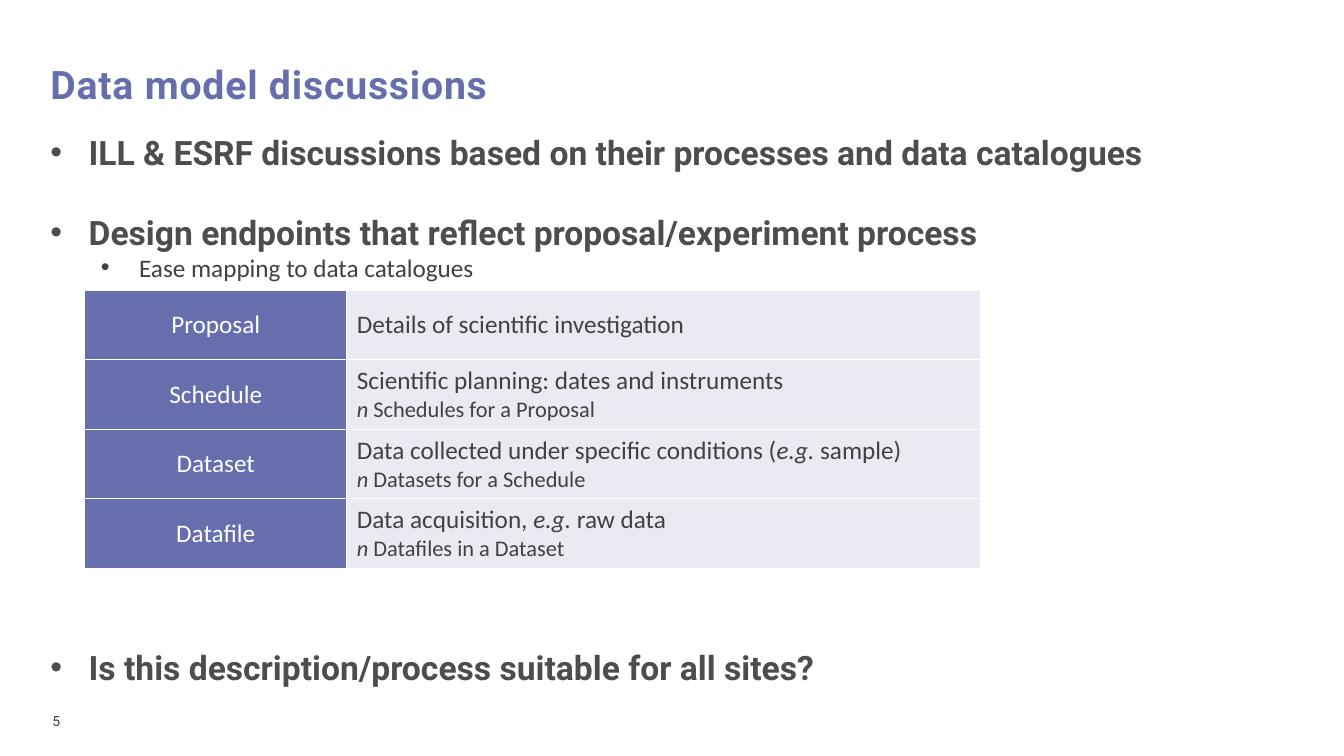
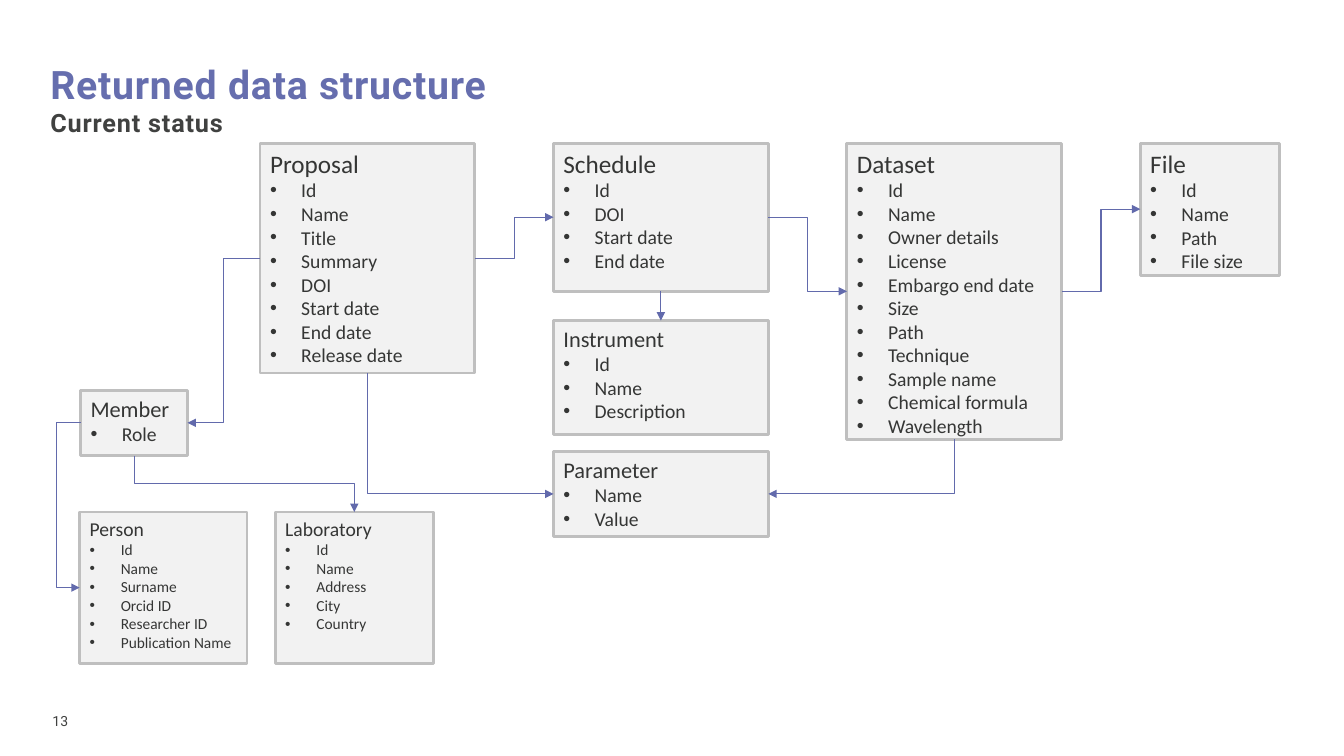
"""Build two slides on a data model: its levels and the returned data structure."""
from lxml.etree import SubElement
from pptx import Presentation
from pptx.dml.color import RGBColor
from pptx.enum.shapes import MSO_CONNECTOR, MSO_SHAPE
from pptx.enum.text import MSO_ANCHOR, PP_ALIGN
from pptx.oxml.ns import qn
from pptx.util import Inches, Pt

VIOLET, ARROW, INK, HEADING, LABEL = "666EAE", "626AAC", "404140", "4C4D4F", "353635"
WHITE, PALE, PANEL, EDGE = "FFFFFF", "EAEBF2", "F2F2F2", "BFBFBF"
TOP, LEFT, BOTTOM, RIGHT = range(4)


def color(value):
    return RGBColor.from_string(value)


class Composer:
    heading_font, body_font = "Roboto", "Calibri"

    def __init__(self):
        self.deck = Presentation()
        self.deck.slide_width, self.deck.slide_height = Inches(13.33), Inches(7.5)
        self.page = None

    def add_page(self, title, number, subtitle=None):
        self.page = self.deck.slides.add_slide(self.deck.slide_layouts[6])
        frame = self.text_box(0.5, 0.6, 7.99, 0.8)
        para = frame.paragraphs[0]
        self.style(para.font, 28, VIOLET, self.heading_font, True)
        self.spaced_span(para, title)
        if subtitle:
            para.add_line_break()
            span = self.spaced_span(para, subtitle)
            self.style(span.font, 18, INK, self.heading_font, True)
        frame = self.text_box(0.52, 7.07, 0.65, 0.3)
        self.fill_text(frame.paragraphs[0], str(number), 10, INK, self.heading_font)

    def spaced_span(self, para, text):
        span = para.add_run()
        span.text = text
        span.font._element.set("spc", "60")
        return span

    def style(self, font, size, ink, name, bold=False):
        font.size, font.name, font.bold = Pt(size), name, bold
        font.color.rgb = color(ink)

    def fill_text(self, para, text, size, ink, name=body_font, bold=False):
        self.style(para.font, size, ink, name, bold)
        for index, part in enumerate(text.split("*")):
            if part:
                span = para.add_run()
                span.text = part
                if index % 2:
                    span.font.italic = True

    def bullet(self, para, margin, hang):
        props = para._p.get_or_add_pPr()
        props.set("marL", str(Inches(margin)))
        props.set("indent", str(-Inches(hang)))
        SubElement(props, qn("a:buFont")).set("typeface", "Arial")
        SubElement(props, qn("a:buChar")).set("char", "•")

    def text_box(self, left, top, width, height):
        box = self.page.shapes.add_textbox(
            Inches(left), Inches(top), Inches(width), Inches(height))
        frame = box.text_frame
        frame.word_wrap = True
        frame.margin_left = frame.margin_top = frame.margin_right = frame.margin_bottom = 0
        return frame

    def bullets(self, top, height, points):
        frame = self.text_box(0.5, top, 12.33, height)
        for index, (text, level) in enumerate(points):
            para = frame.add_paragraph() if index else frame.paragraphs[0]
            self.bullet(para, 0.38 + level * 0.5, 0.38)
            if level:
                para.level = level
                self.fill_text(para, text, 18, INK)
            else:
                if index:
                    para.space_before = Pt(28)
                self.fill_text(para, text, 24, HEADING, self.heading_font, True)

    def table(self, left, top, widths, row_height, rows):
        table = self.page.shapes.add_table(
            len(rows), len(widths), Inches(left), Inches(top),
            Inches(sum(widths)), Inches(row_height * len(rows))).table
        table.first_row = table.horz_banding = False
        for column, width in zip(table.columns, widths):
            column.width = Inches(width)
        for row, (name, *details) in enumerate(rows):
            self.cell(table.cell(row, 0), [name], VIOLET, WHITE, PP_ALIGN.CENTER)
            self.cell(table.cell(row, 1), details, PALE, INK, PP_ALIGN.LEFT)

    def cell(self, cell, lines, fill, ink, align):
        props = cell._tc.get_or_add_tcPr()
        for side in ("lnL", "lnR", "lnT", "lnB"):
            border = SubElement(props, qn("a:" + side), w=str(Pt(1)))
            paint = SubElement(border, qn("a:solidFill"))
            SubElement(paint, qn("a:srgbClr")).set("val", WHITE)
        cell.fill.solid()
        cell.fill.fore_color.rgb = color(fill)
        cell.vertical_anchor = MSO_ANCHOR.MIDDLE
        for index, line in enumerate(lines):
            frame = cell.text_frame
            para = frame.add_paragraph() if index else frame.paragraphs[0]
            para.alignment = align
            self.fill_text(para, line, 16 if index else 18, ink)

    def entity(self, place, name, fields, name_size=18, field_size=14):
        box = self.page.shapes.add_shape(MSO_SHAPE.RECTANGLE, *map(Inches, place))
        box.shadow.inherit = False
        box.fill.solid()
        box.fill.fore_color.rgb = color(PANEL)
        box.line.color.rgb, box.line.width = color(EDGE), Pt(2)
        frame = box.text_frame
        frame.word_wrap, frame.vertical_anchor = True, MSO_ANCHOR.TOP
        frame.paragraphs[0].alignment = PP_ALIGN.LEFT
        self.fill_text(frame.paragraphs[0], name, name_size, LABEL)
        for field in fields:
            para = frame.add_paragraph()
            para.alignment = PP_ALIGN.LEFT
            self.bullet(para, 0.31, 0.31)
            self.fill_text(para, field, field_size, LABEL)
        return box

    def arrow(self, start, start_side, end, end_side, bend=None):
        straight = start_side == BOTTOM and start.left == end.left
        kind = MSO_CONNECTOR.STRAIGHT if straight else MSO_CONNECTOR.ELBOW
        link = self.page.shapes.add_connector(kind, 0, 0, 0, 0)
        link.begin_connect(start, start_side)
        link.end_connect(end, end_side)
        link.line.color.rgb, link.line.width = color(ARROW), Pt(0.75)
        SubElement(link.line._get_or_add_ln(), qn("a:tailEnd")).set("type", "triangle")
        props = link._element.spPr
        SubElement(props, qn("a:effectLst"))
        geometry = props.find(qn("a:prstGeom"))
        if bend is not None:
            ratio = (Inches(bend) - link.begin_x) / (link.end_x - link.begin_x)
            guides = geometry.find(qn("a:avLst"))
            SubElement(guides, qn("a:gd"), name="adj1", fmla=f"val {round(ratio * 100000)}")
        if start_side == BOTTOM and not straight:
            self.turn_down(link, props.find(qn("a:xfrm")))
            if end_side != TOP:
                geometry.set("prst", "bentConnector2")

    def turn_down(self, link, frame):
        rightward = link.end_x > link.begin_x
        width, height = link.width, link.height
        link.left += (width - height) // 2
        link.top += (height - width) // 2
        link.width, link.height = height, width
        frame.attrib.pop("flipH", None)
        frame.set("rot", str((270 if rightward else 90) * 60000))
        if rightward:
            frame.set("flipH", "1")


def model_page(composer):
    composer.add_page("Data model discussions", 5)
    composer.bullets(1.31, 1.5, [
        ("ILL & ESRF discussions based on their processes and data catalogues", 0),
        ("Design endpoints that reflect proposal/experiment process", 0),
        ("Ease mapping to data catalogues", 1)])
    composer.table(0.84, 2.88, [2.6, 6.29], 0.69, [
        ("Proposal", "Details of scientific investigation"),
        ("Schedule", "Scientific planning: dates and instruments",
         "*n* Schedules for a Proposal"),
        ("Dataset", "Data collected under specific conditions (*e.g.* sample)",
         "*n* Datasets for a Schedule"),
        ("Datafile", "Data acquisition, *e.g.* raw data", "*n* Datafiles in a Dataset")])
    composer.bullets(6.42, 0.4, [("Is this description/process suitable for all sites?", 0)])


def structure_page(composer):
    composer.add_page("Returned data structure", 13, "Current status")
    columns = [2.58 + 2.91 * index for index in range(4)]
    top, width, people_top = 1.42, 2.13, 5.08
    proposal = composer.entity(
        (columns[0], top, width, 2.28), "Proposal",
        ["Id", "Name", "Title", "Summary", "DOI", "Start date", "End date", "Release date"])
    schedule = composer.entity(
        (columns[1], top, width, 1.47), "Schedule", ["Id", "DOI", "Start date", "End date"])
    dataset = composer.entity(
        (columns[2], top, width, 2.94), "Dataset",
        ["Id", "Name", "Owner details", "License", "Embargo end date", "Size", "Path",
         "Technique", "Sample name", "Chemical formula", "Wavelength"])
    datafile = composer.entity(
        (columns[3], top, 1.38, 1.31), "File", ["Id", "Name", "Path", "File size"])
    instrument = composer.entity(
        (columns[1], 3.18, width, 1.13), "Instrument", ["Id", "Name", "Description"], 16)
    parameter = composer.entity(
        (columns[1], 4.48, width, 0.84), "Parameter", ["Name", "Value"], 16)
    member = composer.entity((0.8, 3.87, 1.06, 0.65), "Member", ["Role"], 16)
    person = composer.entity(
        (0.79, people_top, 1.66, 1.5), "Person",
        ["Id", "Name", "Surname", "Orcid ID", "Researcher ID", "Publication Name"], 14, 11)
    laboratory = composer.entity(
        (2.73, people_top, 1.57, 1.5), "Laboratory",
        ["Id", "Name", "Address", "City", "Country"], 14, 11)
    composer.arrow(proposal, RIGHT, schedule, LEFT)
    composer.arrow(schedule, RIGHT, dataset, LEFT)
    composer.arrow(dataset, RIGHT, datafile, LEFT)
    composer.arrow(schedule, BOTTOM, instrument, TOP)
    composer.arrow(proposal, BOTTOM, parameter, LEFT)
    composer.arrow(dataset, BOTTOM, parameter, RIGHT)
    composer.arrow(proposal, LEFT, member, RIGHT)
    composer.arrow(member, BOTTOM, laboratory, TOP)
    composer.arrow(member, LEFT, person, LEFT, bend=0.56)


def main():
    composer = Composer()
    model_page(composer)
    structure_page(composer)
    composer.deck.save("out.pptx")


if __name__ == "__main__":
    main()
